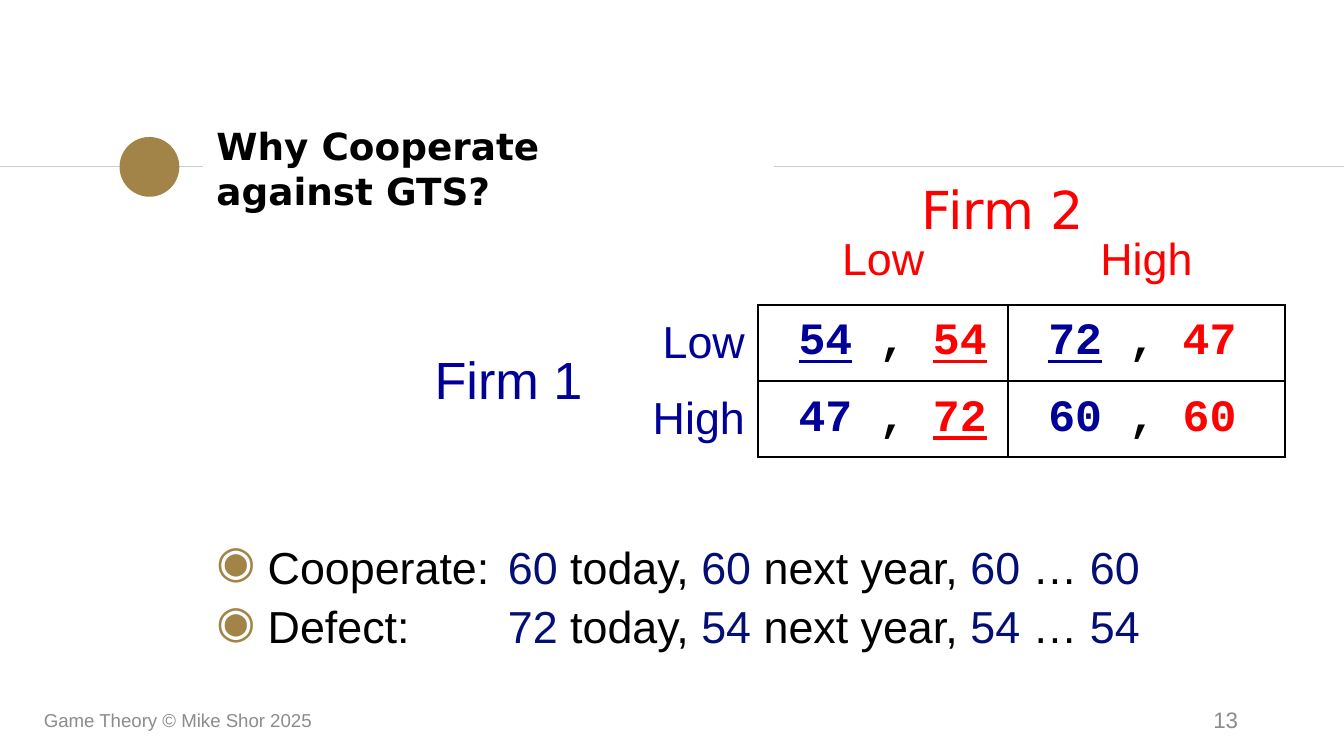
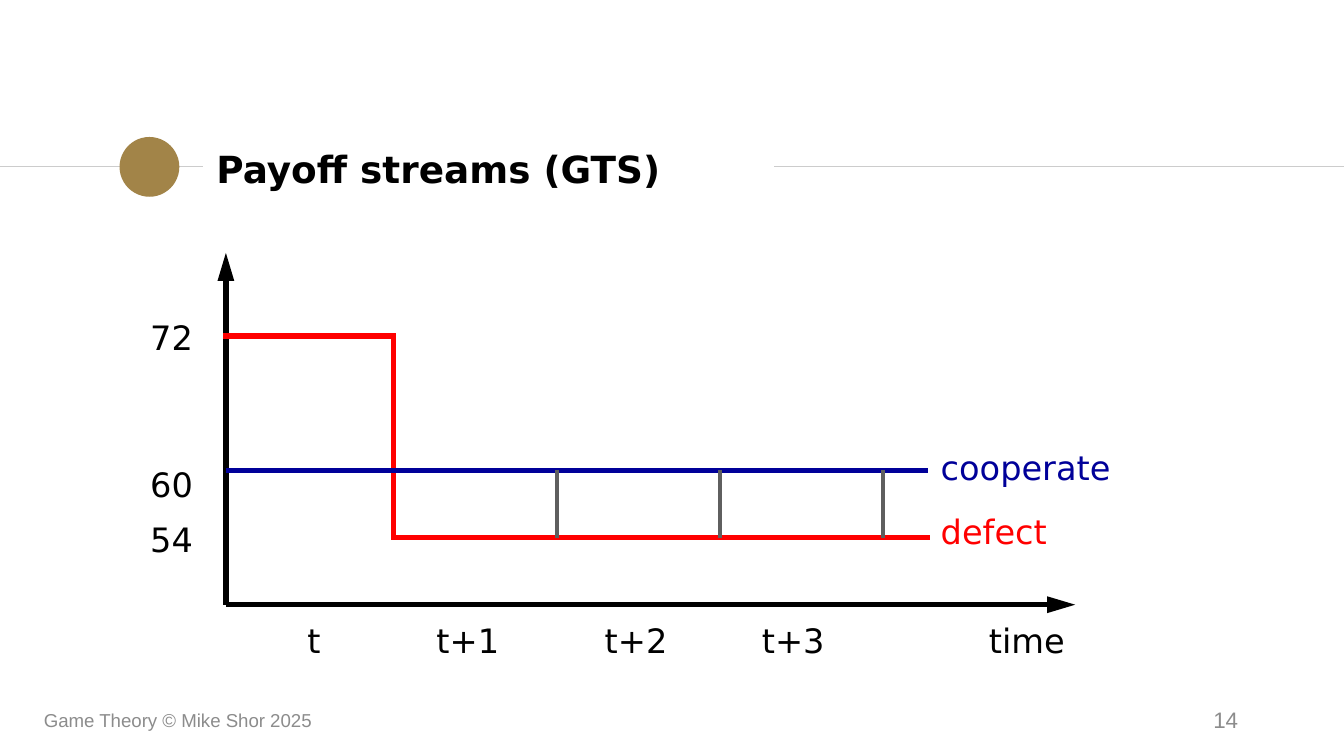
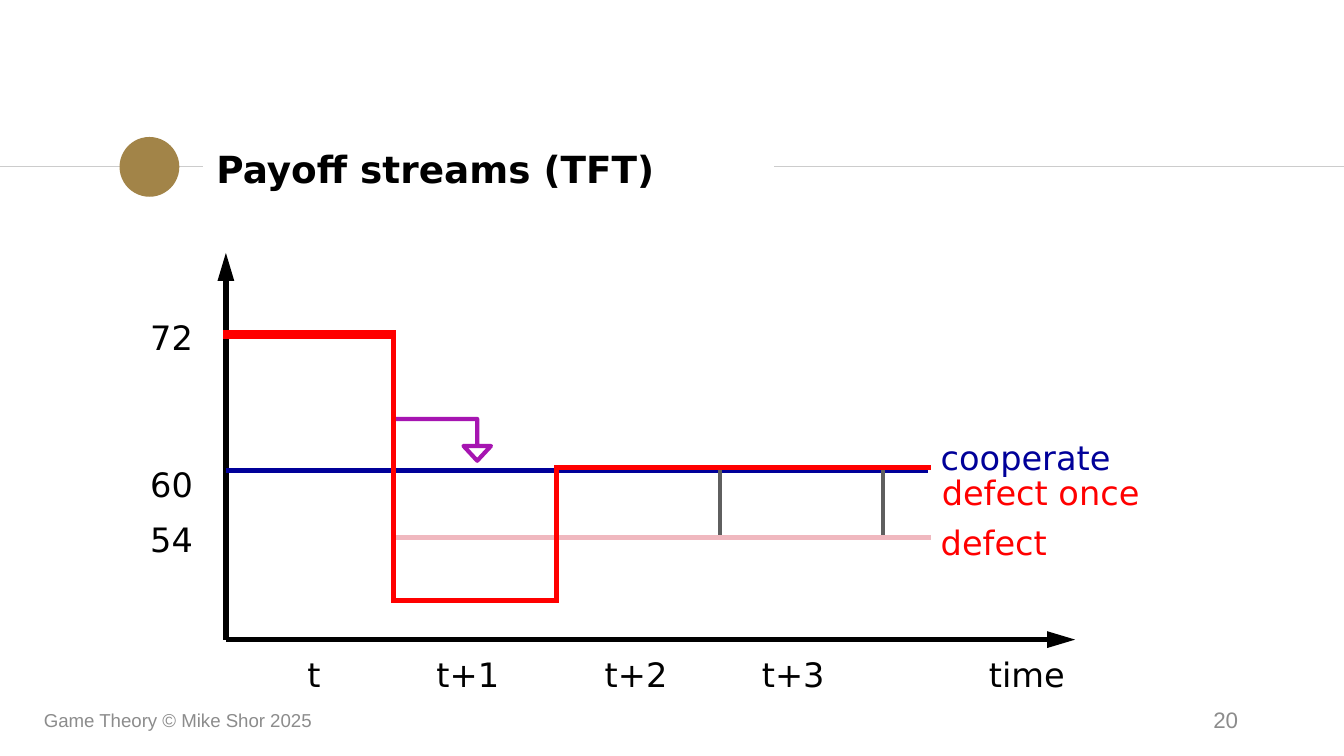
from dataclasses import dataclass
from itertools import pairwise

from lxml import etree
from pptx import Presentation
from pptx import util as u
from pptx.dml.color import RGBColor
from pptx.enum import shapes, text
from pptx.oxml.ns import qn


@dataclass(frozen=True)
class Theme:
    black: str = "000000"
    red: str = "FF0000"
    blue: str = "000099"
    navy: str = "040F76"
    gold: str = "A28448"
    rule: str = "CCCCCC"
    muted: str = "8C8C8C"
    gray: str = "5F5F5F"
    pink: str = "F0B8BF"
    purple: str = "A615B1"
    body_font: str = "Arial"
    title_font: str = "DejaVu Sans"
    payoff_font: str = "Courier New"
    player: int = 28
    body: int = 24
    title: int = 20
    label: int = 18
    number: int = 12
    footer: int = 10


THEME = Theme()
CENTER, RIGHT = text.PP_ALIGN.CENTER, text.PP_ALIGN.RIGHT
TOP, MIDDLE = text.MSO_ANCHOR.TOP, text.MSO_ANCHOR.MIDDLE
NO_GRID_STYLE = "{2D5ABB26-0587-4C30-8999-92F81FD0307C}"


def write(paragraph, content, size=THEME.label, font=THEME.title_font,
          color=THEME.black, bold=False, underline=False, align=None):
    run = paragraph.add_run()
    run.text = content
    run.font.size = u.Pt(size)
    run.font.name = font
    run.font.bold = bold
    run.font.underline = underline
    run.font.color.rgb = RGBColor.from_string(color)
    if align is not None:
        paragraph.alignment = align


def add_xml(parent, tag, **attributes):
    return etree.SubElement(parent, qn(tag), attributes)


class Deck:
    def __init__(self, theme):
        self.theme = theme
        self.presentation = Presentation()
        self.presentation.slide_width = u.Cm(25.4)
        self.presentation.slide_height = u.Cm(14.29)
        self.slide = None

    def new_slide(self, title_lines, number):
        theme = self.theme
        self.slide = self.presentation.slides.add_slide(self.presentation.slide_layouts[6])
        self.line((0, 3.15), (3.84, 3.15), theme.rule, 0.75)
        self.dot(2.26, 2.59, 1.13)
        self.line((14.63, 3.15), (25.4, 3.15), theme.rule, 0.75)
        title = self.frame(3.84, 2.57, 10.77, 1.22, MIDDLE, 0.25).paragraphs[0]
        for index, content in enumerate(title_lines):
            if index:
                title.add_line_break()
            write(title, content, size=theme.title, bold=True)
        self.label("Game Theory © Mike Shor 2025", 0.58, 13.23, 8.59, 0.76, MIDDLE,
                   size=theme.footer, font=theme.body_font, color=theme.muted)
        self.label(str(number), 17.93, 13.23, 5.72, 0.76, MIDDLE, size=theme.number,
                   font=theme.body_font, color=theme.muted, align=RIGHT)

    def frame(self, left, top, width, height, anchor=TOP, inset=0.13):
        box = self.slide.shapes.add_textbox(u.Cm(left), u.Cm(top), u.Cm(width), u.Cm(height))
        frame = box.text_frame
        frame.word_wrap = True
        frame.vertical_anchor = anchor
        frame.margin_top = frame.margin_bottom = u.Cm(inset)
        return frame

    def label(self, content, left, top, width, height=1.02, anchor=TOP, **style):
        write(self.frame(left, top, width, height, anchor).paragraphs[0], content, **style)

    def dot(self, left, top, size):
        shape = self.slide.shapes.add_shape(
            shapes.MSO_SHAPE.OVAL, u.Cm(left), u.Cm(top), u.Cm(size), u.Cm(size))
        shape.shadow.inherit = False
        shape.fill.solid()
        shape.fill.fore_color.rgb = RGBColor.from_string(self.theme.gold)
        shape.line.fill.background()

    def line(self, start, end, color, width=3, arrow=False, cap="flat"):
        connector = self.slide.shapes.add_connector(
            shapes.MSO_CONNECTOR.STRAIGHT, *(u.Cm(value) for value in (*start, *end)))
        connector.line.color.rgb = RGBColor.from_string(color)
        connector.line.width = u.Pt(width)
        outline = connector.line._get_or_add_ln()
        outline.set("cap", cap)
        if arrow:
            add_xml(outline, "a:tailEnd", type="triangle", w="med", len="lg")
        add_xml(connector._element.spPr, "a:effectLst")

    def stream(self, points, color):
        for start, end in pairwise(points):
            self.line(start, end, color, cap="sq")

    def outline(self, points, color, width):
        start, *rest = [(u.Cm(x), u.Cm(y)) for x, y in points]
        builder = self.slide.shapes.build_freeform(*start, scale=1.0)
        builder.add_line_segments(rest, close=True)
        shape = builder.convert_to_shape()
        shape.shadow.inherit = False
        shape.fill.background()
        shape.line.color.rgb = RGBColor.from_string(color)
        shape.line.width = u.Pt(width)

    def bullets(self, items, left, top, width, height):
        theme = self.theme
        frame = self.frame(left, top, width, height, inset=0.25)
        for index, runs in enumerate(items):
            paragraph = frame.add_paragraph() if index else frame.paragraphs[0]
            paragraph.line_spacing = 0.9
            paragraph.space_before = u.Pt(6)
            properties = paragraph._p.get_or_add_pPr()
            properties.set("marL", str(u.Cm(0.97)))
            properties.set("indent", str(u.Cm(-0.97)))
            add_xml(add_xml(properties, "a:buClr"), "a:srgbClr", val=theme.gold)
            add_xml(properties, "a:buChar", char="◉")
            add_xml(add_xml(properties, "a:tabLst"), "a:tab", pos=str(u.Cm(5.51)), algn="l")
            for content, color in runs:
                write(paragraph, content, size=theme.body, font=theme.body_font, color=color)

    def table(self, left, top, widths, row_height, row_count):
        table = self.slide.shapes.add_table(
            row_count, len(widths), u.Cm(left), u.Cm(top),
            u.Cm(sum(widths)), u.Cm(row_height * row_count)).table
        table.first_row = table.horz_banding = False
        table._tbl.tblPr.find(qn("a:tableStyleId")).text = NO_GRID_STYLE
        for column, width in zip(table.columns, widths):
            column.width = u.Cm(width)
        for row in table.rows:
            row.height = u.Cm(row_height)
        return table

    def cell(self, table, row, column, runs, anchor=MIDDLE, borders="", **style):
        cell = table.cell(row, column)
        cell.vertical_anchor = anchor
        properties = cell._tc.get_or_add_tcPr()
        for side in borders:
            edge = add_xml(properties, f"a:ln{side}", w=str(u.Pt(1)))
            add_xml(add_xml(edge, "a:solidFill"), "a:srgbClr", val=self.theme.black)
        cell.fill.background()
        for content, extra in runs:
            write(cell.text_frame.paragraphs[0], content, **{**style, **extra})

    def payoff_matrix(self, moves, payoffs):
        theme = self.theme
        table = self.table(7.09, 4.32, (4.17, 3.07, 4.72, 5.23), 1.44, 3)
        table.cell(1, 0).merge(table.cell(2, 0))
        heading = {"size": theme.body, "font": theme.body_font}
        payoff = {"size": theme.body, "font": theme.payoff_font, "bold": True}
        for column in (0, 1):
            self.cell(table, 0, column, [])
        self.cell(table, 1, 0, [("Firm 1", {})], size=theme.player,
                  font=theme.body_font, color=theme.blue, align=RIGHT)
        for index, move in enumerate(moves):
            self.cell(table, 0, index + 2, [(move, {})], TOP, "B",
                      color=theme.red, align=CENTER, **heading)
            self.cell(table, index + 1, 1, [(move, {})], borders="R",
                      color=theme.blue, align=RIGHT, **heading)
        for row, pairs in enumerate(payoffs):
            best_second = max(second for _, second in pairs)
            for column, (first, second) in enumerate(pairs):
                best_first = max(line[column][0] for line in payoffs)
                runs = [(" ", {}),
                        (str(first), {"color": theme.blue, "underline": first == best_first}),
                        (" , ", {}),
                        (str(second), {"color": theme.red, "underline": second == best_second})]
                self.cell(table, row + 1, column + 2, runs, borders="LRTB", **payoff)

    def payoff_axes(self, axis_y, cooperate_y, defect_y):
        theme = self.theme
        self.line((4.27, axis_y), (4.27, 4.78), theme.black, arrow=True)
        self.line((4.27, axis_y), (20.32, axis_y), theme.black, arrow=True)
        for value, top in (("72", 5.87), ("60", 8.64), ("54", 9.68)):
            self.label(value, 2.59, top, 1.85)
        for period, left, width, height in (
                ("t", 5.56, 1.5, 1.02), ("t+1", 8, 1.85, 1.8), ("t+2", 11.18, 1.85, 1.8),
                ("t+3", 14.15, 2.24, 1.02), ("time", 18.44, 2.24, 1.8)):
            self.label(period, left, axis_y + 0.15, width, height)
        self.stream([(4.27, 6.35), (7.44, 6.35), (7.44, 10.16), (10.62, 10.16),
                     (13.79, 10.16), (17.53, 10.16)], theme.red)
        self.label("defect", 17.53, defect_y, 3.56, color=theme.red)
        self.label("cooperate", 17.53, cooperate_y, 4.34, color=theme.blue)
        self.line((4.27, 8.89), (17.53, 8.89), theme.blue)
        for x in (10.52, 13.6, 16.68):
            self.line((x, 10.16), (x, 8.89), theme.gray, 2.25)


def stream_runs(name, today, later):
    plain, value = THEME.black, THEME.navy
    return [(name + "\t", plain), (today, value), (" today, ", plain), (later, value),
            (" next year, ", plain), (later, value), (" … ", plain), (later, value)]


def main():
    deck = Deck(THEME)

    deck.new_slide(["Why Cooperate ", "against GTS?"], 13)
    deck.bullets([stream_runs("Cooperate:", "60", "60"), stream_runs("Defect: ", "72", "54")],
                 3.84, 10.06, 18.92, 3.1)
    deck.label("Firm 2", 15.49, 3.23, 6.93, 3.25,
               size=THEME.player, color=THEME.red, align=CENTER)
    deck.payoff_matrix(("Low", "High"), [[(54, 54), (72, 47)], [(47, 72), (60, 60)]])

    deck.new_slide(["Payoff streams (GTS)"], 14)
    deck.payoff_axes(axis_y=11.43, cooperate_y=8.31, defect_y=9.53)

    deck.new_slide(["Payoff streams (TFT)"], 20)
    deck.payoff_axes(axis_y=12.09, cooperate_y=8.13, defect_y=9.73)
    deck.stream([(7.44, 10.16), (10.64, 10.16), (13.82, 10.16), (17.55, 10.16)], THEME.pink)
    elbow = [(9.02, 8.43), (9.02, 7.92)]
    deck.outline([(9.02, 8.71), (8.76, 8.43), *elbow, (7.47, 7.92), *reversed(elbow),
                  (9.28, 8.43)], THEME.purple, 2.25)
    deck.stream([(4.27, 6.3), (7.44, 6.3), (7.44, 11.35), (10.52, 11.35), (10.52, 8.84),
                 (13.87, 8.84), (17.55, 8.84)], THEME.red)
    deck.label("defect once", 17.55, 8.79, 5.16, color=THEME.red)

    deck.presentation.save("out.pptx")


if __name__ == "__main__":
    main()
